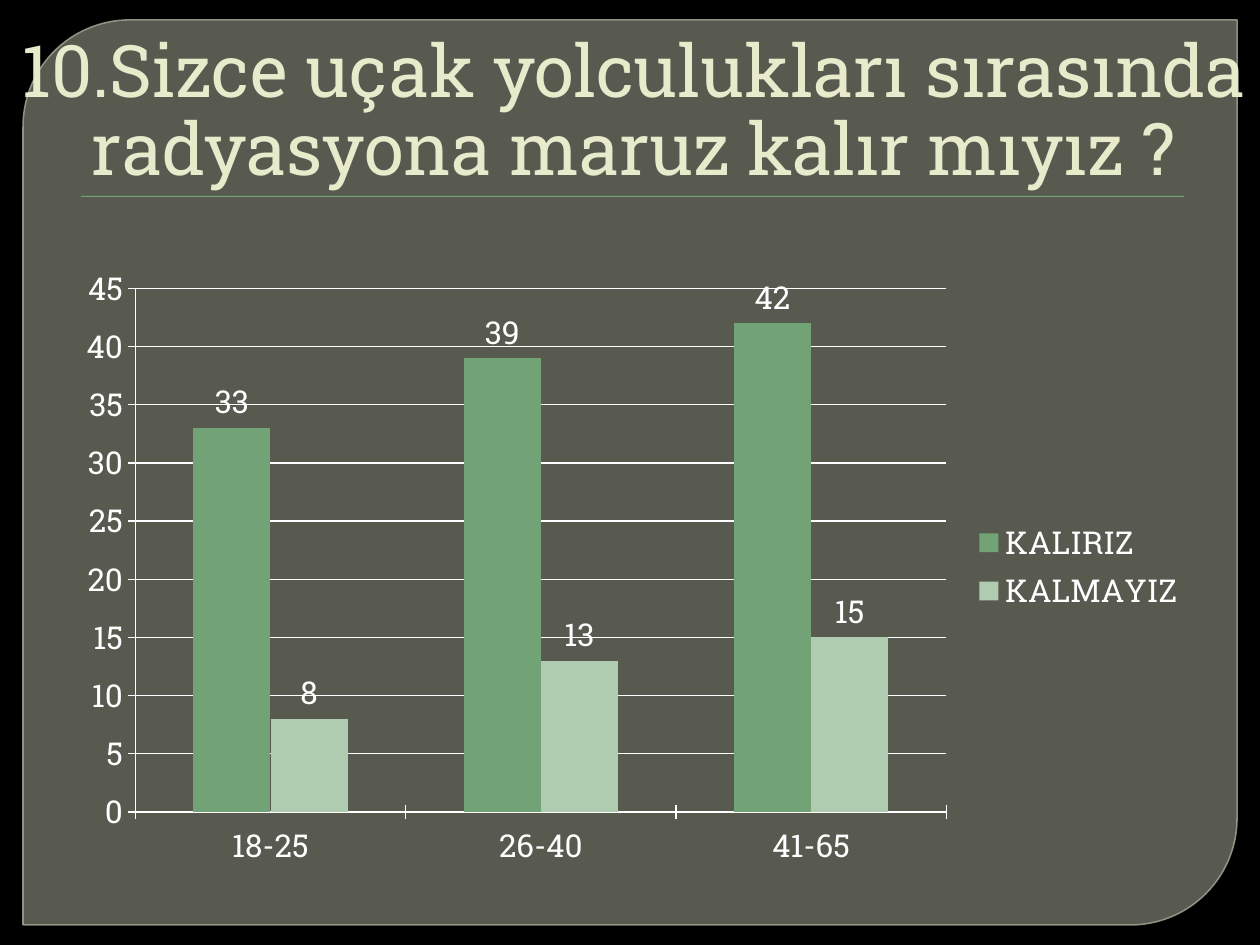
from dataclasses import dataclass
from typing import Any

from lxml.etree import SubElement
from pptx import Presentation
from pptx.chart.data import CategoryChartData
from pptx.dml.color import RGBColor
from pptx.enum.chart import XL_CHART_TYPE, XL_LABEL_POSITION, XL_LEGEND_POSITION, XL_TICK_MARK
from pptx.enum.shapes import MSO_SHAPE
from pptx.enum.text import MSO_ANCHOR, PP_ALIGN
from pptx.oxml.ns import qn
from pptx.util import Emu, Pt

FONT = "Roboto Slab"
WHITE = "FFFFFF"


@dataclass
class Box:
    x: int
    y: int
    w: int
    h: int

    def emu(self) -> tuple[Emu, ...]:
        return tuple(px(v) for v in (self.x, self.y, self.w, self.h))


@dataclass
class Series:
    name: str
    values: tuple[int, ...]
    color: str


def px(n: int) -> Emu:
    return Emu(round(n * 914400 / 126))


def rgb(value: str) -> RGBColor:
    return RGBColor.from_string(value)


def apply(obj: Any, formats: dict[str, Any]) -> None:
    for name, value in formats.items():
        setattr(obj, name, value)


def paint(fill: Any, color: str) -> None:
    fill.solid()
    fill.fore_color.rgb = rgb(color)


def style_font(font: Any, size: float, color: str) -> None:
    apply(font, {"name": FONT, "size": Pt(size), "bold": False})
    font.color.rgb = rgb(color)


def set_alpha(parent: Any, percent: int) -> None:
    clr = next(parent.iter(qn("a:srgbClr")))
    SubElement(clr, qn("a:alpha"), val=str(percent * 1000))


def add_panel(s: Any, box: Box) -> None:
    sp = s.shapes.add_shape(MSO_SHAPE.ROUND_2_DIAG_RECTANGLE, *box.emu())
    sp.shadow.inherit = False
    sp.adjustments[0] = 0.118
    sp.adjustments[1] = 0
    paint(sp.fill, "888B7B")
    paint(sp.line.fill, "9DA090")
    sp.line.width = Pt(0.87)
    spPr = sp.fill.fore_color and sp.element.spPr
    set_alpha(spPr.find(qn("a:solidFill")), 65)
    set_alpha(spPr.find(qn("a:ln")), 88)


def add_rule(s: Any, box: Box) -> None:
    sp = s.shapes.add_shape(MSO_SHAPE.RECTANGLE, *box.emu())
    sp.shadow.inherit = False
    paint(sp.fill, "72A376")
    sp.line.fill.background()
    effects = sp.element.spPr.find(qn("a:effectLst"))
    shadow = SubElement(effects, qn("a:outerShdw"), blurRad="12700", dist="12700", dir="5400000")
    SubElement(shadow, qn("a:srgbClr"), val="000000")
    set_alpha(shadow, 75)


def add_title(s: Any, box: Box, text: str) -> None:
    tf = s.shapes.add_textbox(*box.emu()).text_frame
    apply(tf, {"word_wrap": True, "vertical_anchor": MSO_ANCHOR.BOTTOM, "margin_bottom": px(4)})
    p = tf.paragraphs[0]
    apply(p, {"alignment": PP_ALIGN.CENTER, "line_spacing": 0.9})
    p._p.get_or_add_pPr().set("marL", str(px(8)))
    r = p.add_run()
    r.text = text
    style_font(r.font, 41.4, "E7EACB")


def add_column_chart(s: Any, box: Box, categories: tuple[str, ...], series: list[Series]) -> None:
    data = CategoryChartData()
    data.categories = categories
    for item in series:
        data.add_series(item.name, item.values)
    chart = s.shapes.add_chart(XL_CHART_TYPE.COLUMN_CLUSTERED, *box.emu(), data).chart
    apply(chart, {"has_title": False, "has_legend": True})
    style_font(chart.font, 18, WHITE)
    apply(chart.legend, {"position": XL_LEGEND_POSITION.RIGHT, "include_in_layout": False})

    plot = chart.plots[0]
    apply(plot, {"gap_width": 150, "overlap": 0, "vary_by_categories": False})
    for item, ser in zip(series, plot.series):
        paint(ser.format.fill, item.color)
        labels = ser.data_labels
        apply(labels, {"show_value": True, "position": XL_LABEL_POSITION.OUTSIDE_END})
        style_font(labels.font, 18, WHITE)

    axis = chart.value_axis
    apply(axis, {"minimum_scale": 0, "maximum_scale": 45, "major_unit": 5,
                 "has_major_gridlines": True})
    for ax in (chart.category_axis, axis):
        ax.major_tick_mark = XL_TICK_MARK.CROSS
    for part in (chart.category_axis, axis, axis.major_gridlines):
        paint(part.format.line.fill, WHITE)
        part.format.line.width = Pt(0.75)


def main() -> None:
    prs = Presentation()
    apply(prs, {"slide_width": px(1260), "slide_height": px(945)})
    s = prs.slides.add_slide(prs.slide_layouts[6])
    paint(s.background.fill, "000000")
    add_panel(s, Box(23, 20, 1214, 905))
    add_rule(s, Box(81, 196, 1103, 1))
    add_title(s, Box(0, 0, 1260, 195),
              "10.Sizce uçak yolculukları sırasında radyasyona maruz kalır mıyız ?")
    add_column_chart(s, Box(64, 255, 1134, 624), ("18-25", "26-40", "41-65"), [
        Series("KALIRIZ", (33, 39, 42), "72A376"),
        Series("KALMAYIZ", (8, 13, 15), "B0CCB0"),
    ])
    prs.save("out.pptx")


if __name__ == "__main__":
    main()
